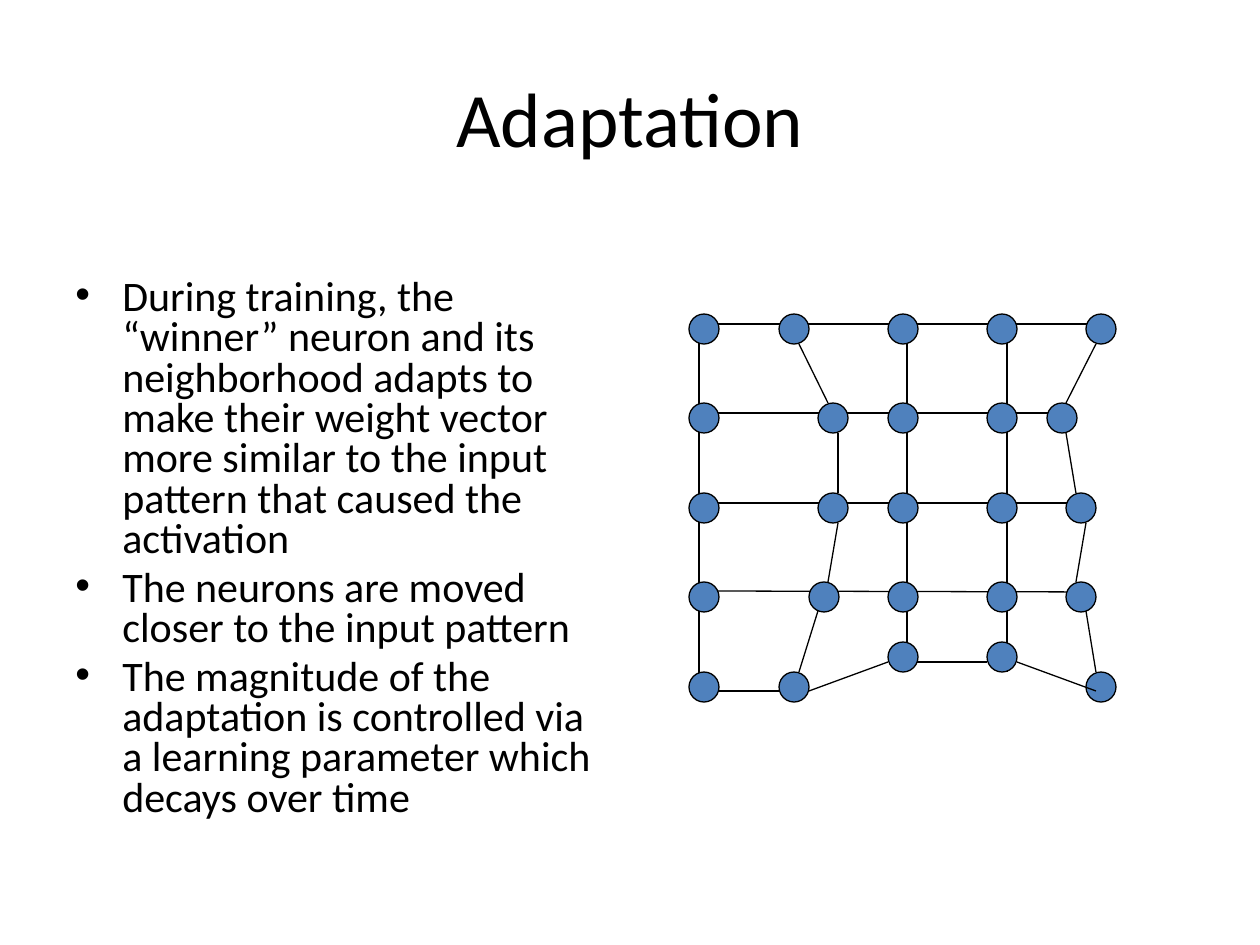
from lxml.etree import SubElement
from pptx import Presentation
from pptx.dml.color import RGBColor
from pptx.enum.shapes import MSO_CONNECTOR as Connector, MSO_SHAPE as Shape
from pptx.enum.text import MSO_ANCHOR as Anchor, PP_ALIGN as Align
from pptx.oxml.ns import qn
from pptx.util import Emu, Pt

BLACK = RGBColor(0x00, 0x00, 0x00)
NODE_BLUE = RGBColor(0x4F, 0x81, 0xBD)
PX_PER_INCH = 126
NODE_SIZE = 30
HANGING = 47

TITLE_FONT = {"name": "Calibri", "size": Pt(44)}
POINT_FONT = {"name": "Calibri", "size": Pt(24)}
TITLE_FRAME = {"word_wrap": True, "vertical_anchor": Anchor.MIDDLE}
POINTS_FRAME = {"word_wrap": True, "vertical_anchor": Anchor.TOP}

POINTS = [
    "During training, the “winner” neuron and its neighborhood adapts to make "
    "their weight vector more similar to the input pattern that caused the activation",
    "The neurons are moved closer to the input pattern",
    "The magnitude of the adaptation is controlled via a learning parameter "
    "which decays over time",
]

NODE_ROWS = [
    (0, (0, 90, 199, 298, 397)),
    (89, (0, 129, 199, 298, 358)),
    (179, (0, 129, 199, 298, 377)),
    (268, (0, 120, 199, 298, 377)),
    (358, (0, 90, 199, 298, 397)),
]
RAISED_NODES = {(199, 358): 328, (298, 358): 328}

GRID_LINES = [
    (10, 10, 417, 10), (10, 99, 368, 99), (10, 189, 407, 189), (10, 277, 397, 278),
    (10, 10, 10, 366), (218, 10, 218, 348), (318, 10, 318, 358),
]
BENT_LINKS = [
    (110, 30, 139, 89), (149, 119, 149, 179), (139, 268, 149, 209), (110, 358, 129, 297),
    (30, 377, 90, 377), (120, 377, 199, 348), (228, 348, 298, 348), (328, 348, 407, 377),
    (407, 30, 377, 89), (377, 119, 387, 179), (397, 209, 387, 268), (397, 297, 407, 358),
]


def px(length):
    """Turn pixels into EMU."""
    return Emu(round(length * 914400 / PX_PER_INCH))


def apply_format(target, values):
    """Set each attribute of target from a dict of values."""
    for name, value in values.items():
        setattr(target, name, value)


def add_frame(slide, box, frame_format):
    """Add a text box and return its text frame."""
    frame = slide.shapes.add_textbox(*map(px, box)).text_frame
    apply_format(frame, frame_format)
    return frame


def add_title(slide, box, text):
    """Place the centred title."""
    heading = add_frame(slide, box, TITLE_FRAME).paragraphs[0]
    heading.text = text
    heading.alignment = Align.CENTER
    apply_format(heading.font, TITLE_FONT)
    heading.font.color.rgb = BLACK


def add_points(slide, box, points):
    """Place the bulleted points."""
    frame = add_frame(slide, box, POINTS_FRAME)
    for index, text in enumerate(points):
        point = frame.add_paragraph() if index else frame.paragraphs[0]
        point.text = text
        point.line_spacing = 0.8
        point.space_before = Pt(4.8 if index else 0)
        properties = point._p.get_or_add_pPr()
        properties.set("marL", str(px(HANGING)))
        properties.set("indent", str(px(-HANGING)))
        SubElement(properties, qn("a:buFont"), typeface="Arial")
        SubElement(properties, qn("a:buChar"), char="•")
        apply_format(point.font, POINT_FONT)
        point.font.color.rgb = BLACK


def outline(shape):
    """Give a shape or connector the thin black line."""
    shape.line.color.rgb = BLACK
    shape.line.width = Pt(0.75)


def add_links(slide, left, top, links):
    """Draw straight links between neurons."""
    for x1, y1, x2, y2 in links:
        ends = map(px, (left + x1, top + y1, left + x2, top + y2))
        link = slide.shapes.add_connector(Connector.STRAIGHT, *ends)
        outline(link)
        SubElement(link._element.spPr, qn("a:effectLst"))


def add_neuron(slide, left, top):
    """Draw one neuron."""
    neuron = slide.shapes.add_shape(Shape.OVAL, *map(px, (left, top, NODE_SIZE, NODE_SIZE)))
    neuron.shadow.inherit = False
    neuron.fill.solid()
    neuron.fill.fore_color.rgb = NODE_BLUE
    outline(neuron)


def add_lattice(slide, left, top):
    """Draw the deformed neuron lattice from its top left corner."""
    add_links(slide, left, top, GRID_LINES)
    for row, columns in NODE_ROWS:
        for column in columns:
            add_neuron(slide, left + column, top + RAISED_NODES.get((column, row), row))
    add_links(slide, left, top, BENT_LINKS)


def main():
    """Build and save the slide."""
    deck = Presentation()
    deck.slide_width, deck.slide_height = px(1260), px(945)
    slide = deck.slides.add_slide(deck.slide_layouts[6])
    add_title(slide, (63, 38, 1134, 157), "Adaptation")
    add_points(slide, (63, 273, 557, 596), POINTS)
    add_lattice(slide, 689, 314)
    deck.save("out.pptx")


if __name__ == "__main__":
    main()
